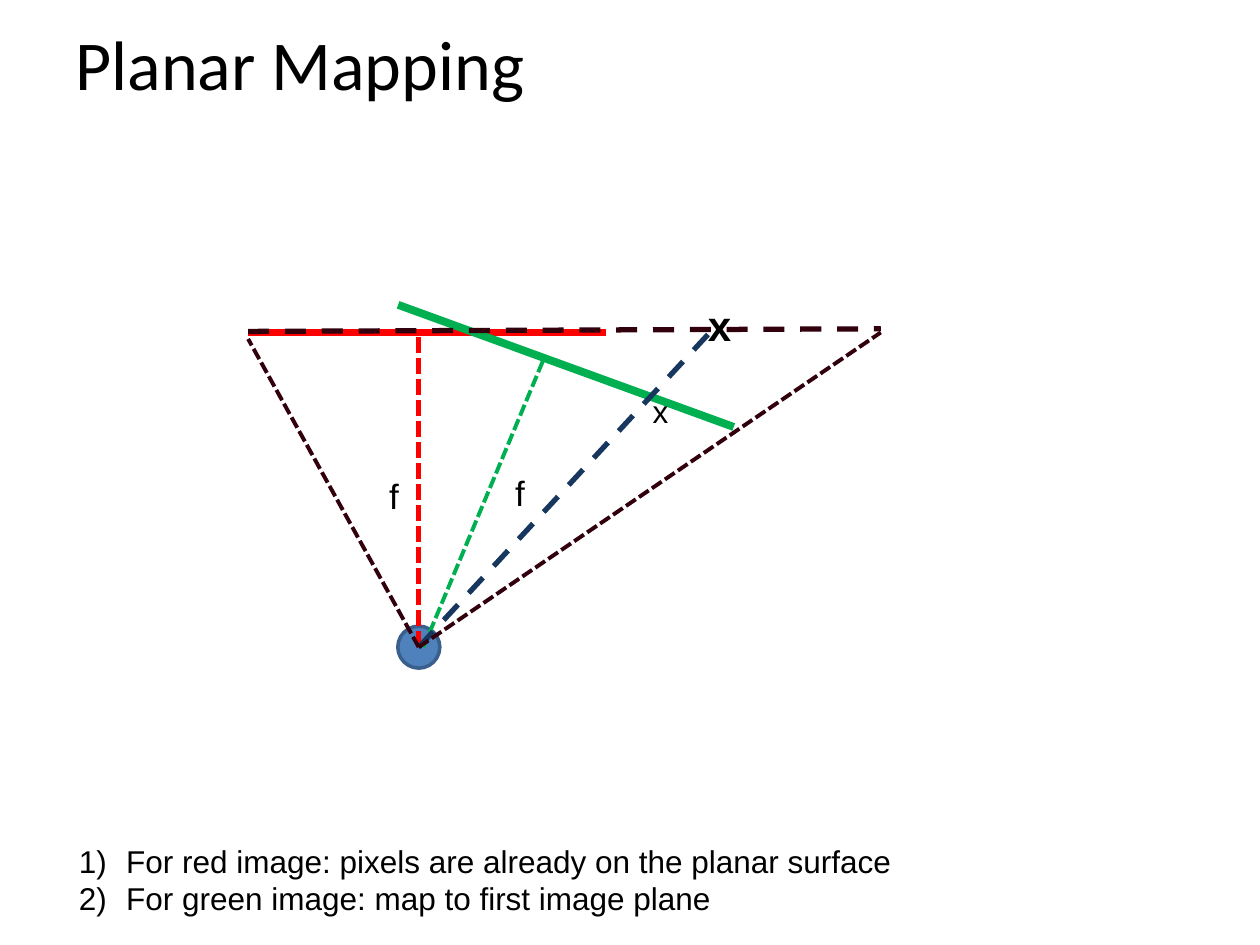
import pptx
import pptx.util
import pptx.dml.color
import pptx.enum.dml
import pptx.enum.shapes
import pptx.enum.text
import pptx.oxml
import pptx.oxml.ns

Pt = pptx.util.Pt
DASH = pptx.enum.dml.MSO_LINE.DASH
DOT = pptx.enum.dml.MSO_LINE.SQUARE_DOT


def rgb(value):
    return pptx.dml.color.RGBColor.from_string(value)


def add_run(p, text, size, font="Arial", bold=False):
    r = p.add_run()
    r.text = text
    r.font.size = Pt(size)
    r.font.name = font
    r.font.bold = bold
    r.font.color.rgb = rgb("000000")


prs = pptx.Presentation()
prs.slide_width, prs.slide_height = Pt(720), Pt(540)
s = prs.slides.add_slide(prs.slide_layouts[5])

title = s.shapes.title
title.left, title.top, title.width, title.height = Pt(36), Pt(0), Pt(648), Pt(72)
title.text_frame.vertical_anchor = pptx.enum.text.MSO_ANCHOR.MIDDLE
p = title.text_frame.paragraphs[0]
p.alignment = pptx.enum.text.PP_ALIGN.LEFT
add_run(p, "Planar Mapping", 40, "Calibri")

eye_x, eye_y, eye_d = 239.3, 369.8, 24
sp = s.shapes.add_shape(pptx.enum.shapes.MSO_SHAPE.OVAL, Pt(eye_x - eye_d / 2),
                        Pt(eye_y - eye_d / 2), Pt(eye_d), Pt(eye_d))
sp.shadow.inherit = False
sp.fill.solid()
sp.fill.fore_color.rgb = rgb("4F81BD")
sp.line.color.rgb = rgb("3A5F8C")
sp.line.width = Pt(2)

lines = [
    (141.8, 190, 346.3, 190, "FF0000", 4.5, None),
    (227.5, 174.2, 419.3, 244, "00B050", 4.5, None),
    (eye_x, eye_y, eye_x, 190, "FF0000", 3, DOT),
    (242, eye_y, 311, 204.5, "00B050", 2.25, DOT),
    (eye_x, eye_y, 407.5, 188, "17375E", 3, DASH),
    (141.8, 189.4, 503.3, 187.9, "32000C", 3, DASH),
    (eye_x, eye_y, 503.3, 190, "32000C", 2.25, DOT),
    (eye_x, eye_y, 141.8, 193.7, "32000C", 2.25, DOT),
]
for x1, y1, x2, y2, color, width, dash in lines:
    c = s.shapes.add_connector(pptx.enum.shapes.MSO_CONNECTOR.STRAIGHT,
                               Pt(x1), Pt(y1), Pt(x2), Pt(y2))
    c.line.color.rgb = rgb(color)
    c.line.width = Pt(width)
    if dash:
        c.line.dash_style = dash
    pptx.oxml.ns.qn("a:effectLst")
    c._element.spPr.append(pptx.oxml.parse_xml(
        '<a:effectLst xmlns:a="http://schemas.openxmlformats.org/drawingml/2006/main"/>'))

labels = [
    ("f", 215.3, 267.8, 20, 31.5, 20, False),
    ("f", 287.3, 265.7, 20, 31.5, 20, False),
    ("x", 365.8, 220.3, 23.5, 29, 18, False),
    ("x", 397.4, 167.8, 28, 36, 24, True),
]
for text, x, y, w, h, size, bold in labels:
    tf = s.shapes.add_textbox(Pt(x), Pt(y), Pt(w), Pt(h)).text_frame
    tf.word_wrap = False
    tf.auto_size = pptx.enum.text.MSO_AUTO_SIZE.SHAPE_TO_FIT_TEXT
    add_run(tf.paragraphs[0], text, size, bold=bold)

tf = s.shapes.add_textbox(Pt(38), Pt(477.4), Pt(483), Pt(51)).text_frame
tf.word_wrap = False
tf.auto_size = pptx.enum.text.MSO_AUTO_SIZE.SHAPE_TO_FIT_TEXT
steps = ["For red image: pixels are already on the planar surface",
         "For green image: map to first image plane"]
for i, text in enumerate(steps):
    p = tf.paragraphs[0] if i == 0 else tf.add_paragraph()
    pPr = p._p.get_or_add_pPr()
    pPr.set("marL", str(Pt(27)))
    pPr.set("indent", str(Pt(-27)))
    pPr.append(pptx.oxml.parse_xml(
        '<a:buAutoNum xmlns:a="http://schemas.openxmlformats.org/drawingml/2006/main"'
        ' type="arabicParenR"/>'))
    add_run(p, text, 18)

prs.save("out.pptx")
